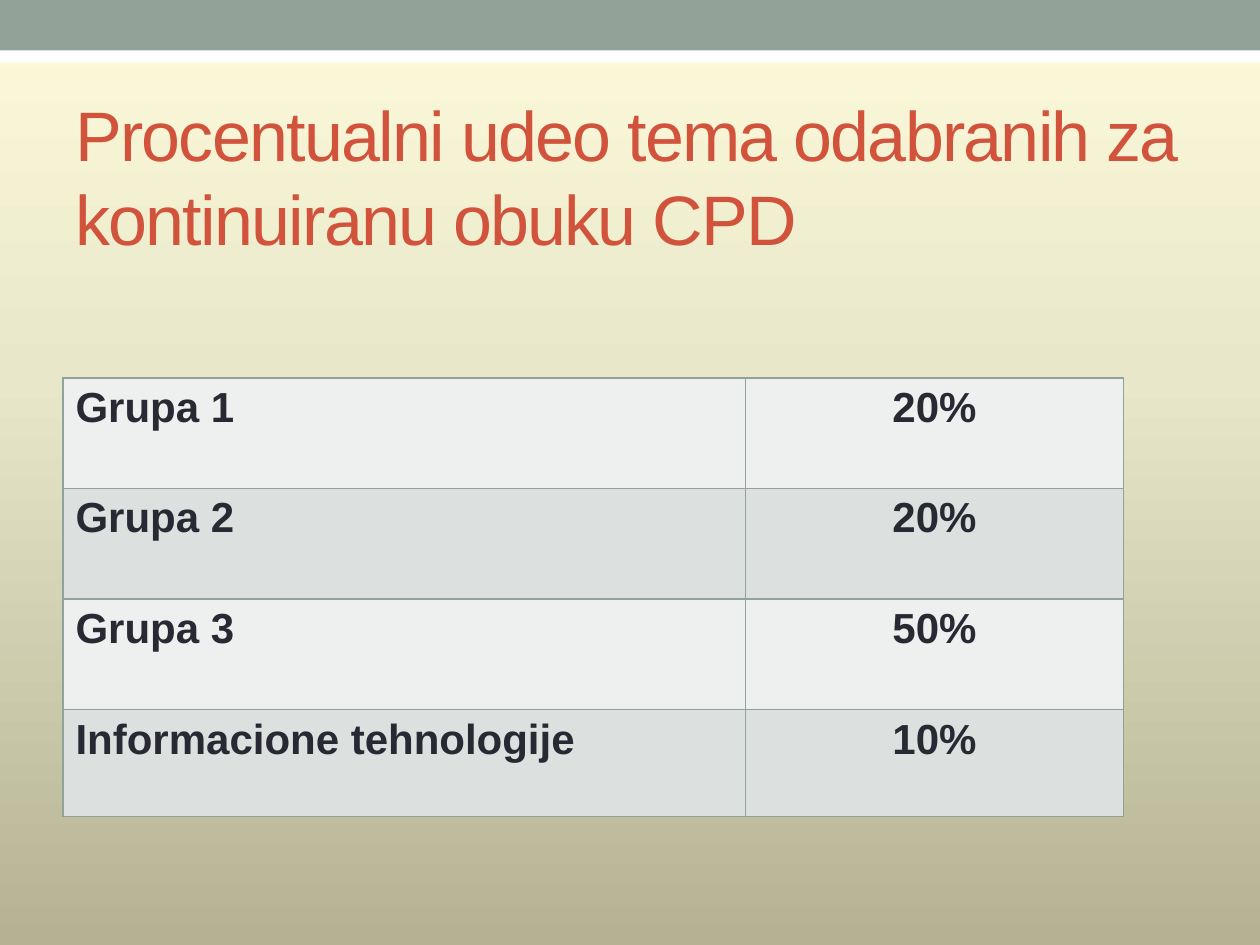
import pptx
import pptx.dml.color
import pptx.enum.shapes
import pptx.enum.text
import pptx.oxml
import pptx.oxml.ns
import pptx.util
from lxml import etree

Pt = pptx.util.Pt
RGBColor = pptx.dml.color.RGBColor

WHITE = RGBColor(0xFF, 0xFF, 0xFF)
SAGE = RGBColor(0x93, 0xA2, 0x99)
BRICK = RGBColor(0xD2, 0x53, 0x3C)
INK = RGBColor(0x29, 0x29, 0x34)
ROW_FILLS = (RGBColor(0xEE, 0xF0, 0xEF), RGBColor(0xDC, 0xE0, 0xDE))
GRADIENT = (
    (0, RGBColor(0xFD, 0xFB, 0xDA)),
    (40, RGBColor(0xE8, 0xE7, 0xCA)),
    (100, RGBColor(0xB4, 0xB2, 0x93)),
)

FONT = "Arial"
WIDTH, HEIGHT = 720, 540
TITLE = "Procentualni udeo tema odabranih za kontinuiranu obuku CPD"
SHARES = (
    ("Grupa 1", "20%"),
    ("Grupa 2", "20%"),
    ("Grupa 3", "50%"),
    ("Informacione tehnologije", "10%"),
)
COLUMN_WIDTHS = (390, 216)
ROW_HEIGHTS = (63.2, 63.2, 63.2, 61)


def set_background(page):
    """Fill the page with a three-stop gradient from top to bottom."""
    fill = page.background.fill
    fill.gradient()
    gradient = page.background._cSld.bg.bgPr.find(pptx.oxml.ns.qn("a:gradFill"))
    for child in list(gradient):
        gradient.remove(child)
    stops = etree.SubElement(gradient, pptx.oxml.ns.qn("a:gsLst"))
    for percent, color in GRADIENT:
        stop = etree.SubElement(stops, pptx.oxml.ns.qn("a:gs"), pos=str(percent * 1000))
        etree.SubElement(stop, pptx.oxml.ns.qn("a:srgbClr"), val=str(color))
    etree.SubElement(gradient, pptx.oxml.ns.qn("a:lin"), ang="5400000", scaled="0")


def add_band(page, top, height, color):
    band = page.shapes.add_shape(
        pptx.enum.shapes.MSO_SHAPE.RECTANGLE, 0, Pt(top), Pt(WIDTH), Pt(height))
    band.shadow.inherit = False
    band.fill.solid()
    band.fill.fore_color.rgb = color
    band.line.fill.background()


def style_text(para, size, color, bold=False):
    for span in para.runs:
        span.font.name = FONT
        span.font.size = Pt(size)
        span.font.bold = bold
        span.font.color.rgb = color


def add_title(page):
    box = page.shapes.add_textbox(Pt(36), Pt(21.6), Pt(648), Pt(152.6))
    frame = box.text_frame
    frame.word_wrap = True
    frame.vertical_anchor = pptx.enum.text.MSO_ANCHOR.MIDDLE
    frame.margin_top = Pt(8)
    frame.text = TITLE
    para = frame.paragraphs[0]
    para.line_spacing = Pt(48)
    style_text(para, 40, BRICK)
    para.runs[0].font._element.set("spc", "-100")


def set_borders(cell):
    """Draw a thin line on all four sides; lines go before the cell fill."""
    properties = cell._tc.get_or_add_tcPr()
    for index, side in enumerate(("a:lnL", "a:lnR", "a:lnT", "a:lnB")):
        line = pptx.oxml.parse_xml(
            f'<{side} {pptx.oxml.ns.nsdecls("a")} w="{Pt(1)}"><a:solidFill>'
            f'<a:srgbClr val="{SAGE}"/></a:solidFill></{side}>')
        properties.insert(index, line)


def add_share_table(page):
    table = page.shapes.add_table(
        len(SHARES), len(COLUMN_WIDTHS), Pt(36), Pt(216),
        Pt(sum(COLUMN_WIDTHS)), Pt(sum(ROW_HEIGHTS))).table
    table.first_row = False
    for column, width in zip(table.columns, COLUMN_WIDTHS):
        column.width = Pt(width)
    for row_index, texts in enumerate(SHARES):
        table.rows[row_index].height = Pt(ROW_HEIGHTS[row_index])
        for column_index, text in enumerate(texts):
            cell = table.cell(row_index, column_index)
            cell.fill.solid()
            cell.fill.fore_color.rgb = ROW_FILLS[row_index % 2]
            set_borders(cell)
            cell.text_frame.text = text
            para = cell.text_frame.paragraphs[0]
            if column_index == 1:
                para.alignment = pptx.enum.text.PP_ALIGN.CENTER
            style_text(para, 24, INK, bold=True)


def main():
    deck = pptx.Presentation()
    deck.slide_width, deck.slide_height = Pt(WIDTH), Pt(HEIGHT)
    page = deck.slides.add_slide(deck.slide_layouts[6])

    # Background and top bands
    set_background(page)
    add_band(page, 17.6, 18, WHITE)
    add_band(page, 0, 28.8, SAGE)

    # Title and table of shares
    add_title(page)
    add_share_table(page)

    deck.save("out.pptx")


if __name__ == "__main__":
    main()
